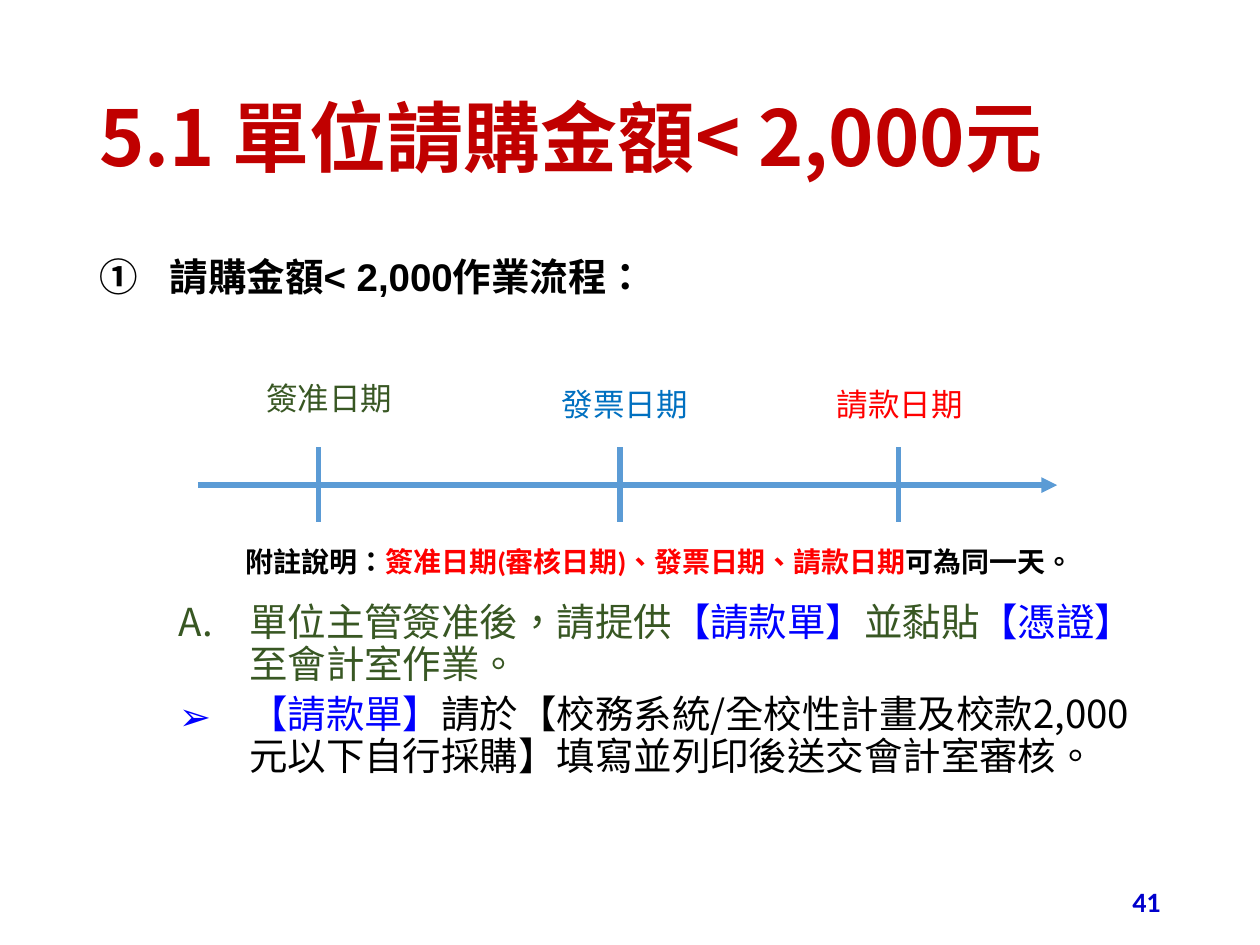
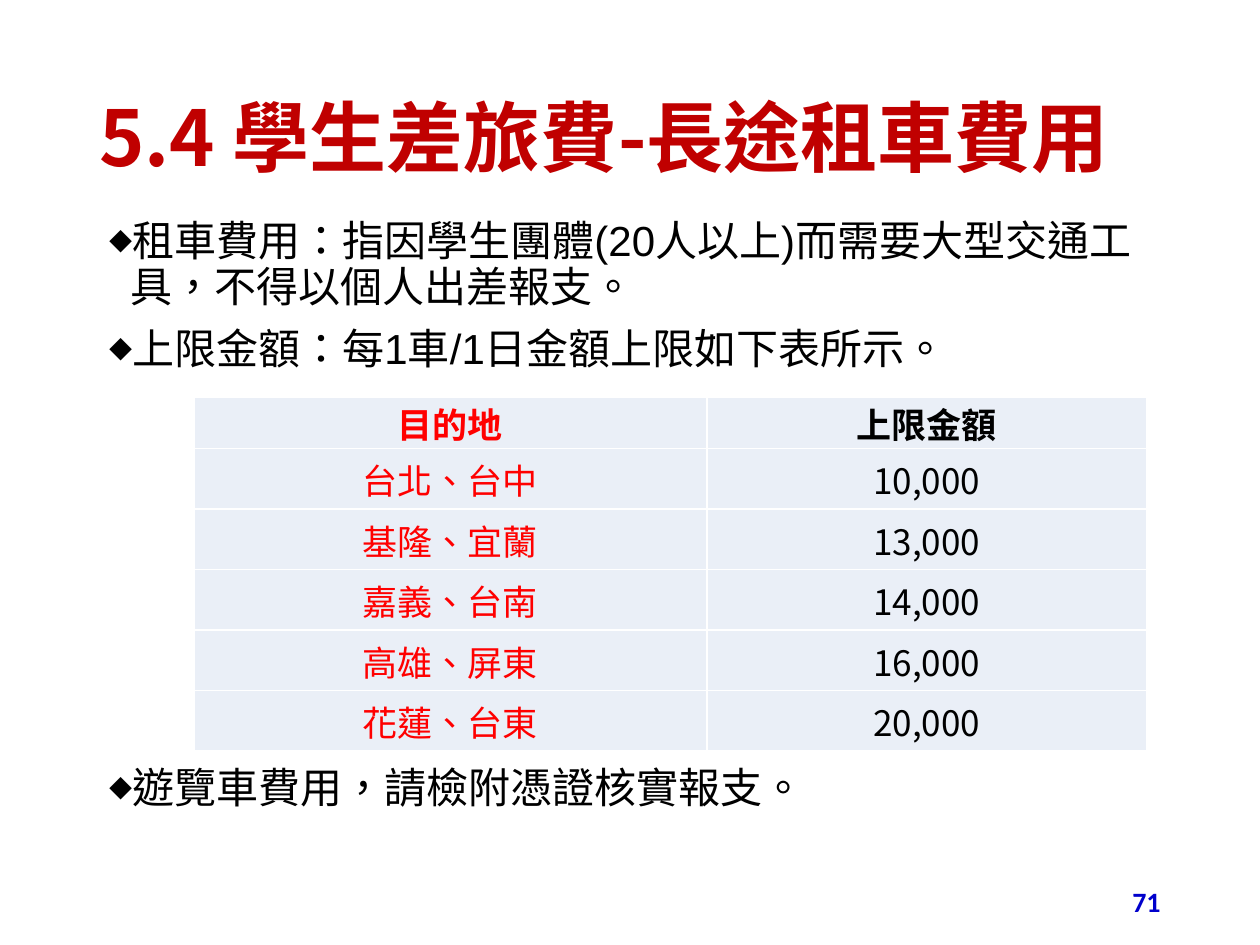
from lxml import etree
from pptx import Presentation
from pptx.dml.color import RGBColor
from pptx.enum.shapes import MSO_CONNECTOR
from pptx.enum.text import MSO_ANCHOR, PP_ALIGN
from pptx.oxml.ns import qn
from pptx.util import Inches, Pt

RED = RGBColor(0xFF, 0x00, 0x00)
DARK_RED = RGBColor(0xC0, 0x00, 0x00)
BLACK = RGBColor(0x00, 0x00, 0x00)
WHITE = RGBColor(0xFF, 0xFF, 0xFF)
GREEN = RGBColor(0x38, 0x57, 0x23)
BLUE = RGBColor(0x00, 0x00, 0xFF)
NUMBER_BLUE = RGBColor(0x00, 0x00, 0xCC)
LABEL_BLUE = RGBColor(0x00, 0x70, 0xC0)
LINE_BLUE = RGBColor(0x5B, 0x9B, 0xD5)
CELL_FILL = RGBColor(0xEA, 0xEF, 0xF7)

NOTO, ARIAL, CALIBRI = "Noto Sans CJK SC", "Arial", "Calibri"
LEFT, CENTER, RIGHT = PP_ALIGN.LEFT, PP_ALIGN.CENTER, PP_ALIGN.RIGHT
TOP, MIDDLE = MSO_ANCHOR.TOP, MSO_ANCHOR.MIDDLE
STRAIGHT = MSO_CONNECTOR.STRAIGHT

BODY_LEFT, BODY_WIDTH = 0.69, 8.62
BODY_SPACING = 0.9  # line spacing of titles and body text
DIAMOND = "◆"


def set_bullet(p, bullet):
    """Use an automatic number scheme or, for a single symbol, that symbol."""
    pPr = p._p.get_or_add_pPr()
    if bullet == DIAMOND:
        etree.SubElement(pPr, qn("a:buSzPct")).set("val", "55000")
    etree.SubElement(pPr, qn("a:buFont")).set("typeface", NOTO)
    if len(bullet) == 1:
        etree.SubElement(pPr, qn("a:buChar")).set("char", bullet)
    else:
        etree.SubElement(pPr, qn("a:buAutoNum")).set("type", bullet)


def add_run(p, text, color, size, font, bold):
    r = p.add_run()
    r.text = text
    r.font.size, r.font.bold, r.font.name = Pt(size), bold, font
    r.font.color.rgb = color
    rPr = r._r.get_or_add_rPr()
    rPr.set("lang", "zh-TW")
    etree.SubElement(rPr, qn("a:ea")).set("typeface", NOTO)


def write(tf, paragraphs, size=18, font=NOTO, bold=False, align=LEFT,
          spacing=None, before=0, indent=(0, 0)):
    """Fill a frame from (bullet, [(text, color), ...]) paragraphs."""
    for i, (bullet, runs) in enumerate(paragraphs):
        p = tf.add_paragraph() if i else tf.paragraphs[0]
        if bullet:
            set_bullet(p, bullet)
        p.alignment = align
        if spacing:
            p.line_spacing = spacing
        if i:
            p.space_before = Pt(before)
        pPr = p._p.get_or_add_pPr()
        pPr.set("marL", str(Inches(indent[0])))
        pPr.set("indent", str(Inches(indent[1])))
        pPr.set("hangingPunct", "0")
        for text, color in runs:
            add_run(p, text, color, size, font, bold)


def add_text(slide, box, paragraphs, anchor=TOP, **fmt):
    tf = slide.shapes.add_textbox(*map(Inches, box)).text_frame
    tf.word_wrap = True
    tf.vertical_anchor = anchor
    write(tf, paragraphs, **fmt)


def add_line(slide, x1, y1, x2, y2, arrow=False):
    line = slide.shapes.add_connector(STRAIGHT, *map(Inches, (x1, y1, x2, y2)))
    line.line.color.rgb = LINE_BLUE
    line.line.width = Pt(3)
    if arrow:
        ln = line.line._get_or_add_ln()
        etree.SubElement(ln, qn("a:tailEnd")).set("type", "triangle")
    etree.SubElement(line._element.spPr, qn("a:effectLst"))


def set_borders(cell):
    tcPr = cell._tc.get_or_add_tcPr()
    for side in ("lnL", "lnR", "lnT", "lnB"):
        ln = etree.SubElement(tcPr, qn(f"a:{side}"), w=str(Pt(1)))
        fill = etree.SubElement(ln, qn("a:solidFill"))
        etree.SubElement(fill, qn("a:srgbClr"), val=str(WHITE))


def add_fee_table(slide, rows):
    widths, heights = (4.07, 3.49), [0.41] + [0.48] * (len(rows) - 1)
    table = slide.shapes.add_table(
        len(rows), 2, Inches(1.54), Inches(3.15),
        Inches(sum(widths)), Inches(sum(heights))).table
    for column, width in zip(table.columns, widths):
        column.width = Inches(width)
    for i, (values, height) in enumerate(zip(rows, heights)):
        table.rows[i].height = Inches(height)
        for j, (text, color) in enumerate(zip(values, (RED, BLACK))):
            cell = table.cell(i, j)
            set_borders(cell)
            cell.fill.solid()
            cell.fill.fore_color.rgb = CELL_FILL
            cell.margin_left = cell.margin_right = cell.margin_top = Inches(0.01)
            cell.margin_bottom = 0
            cell.vertical_anchor = MIDDLE
            write(cell.text_frame, [(None, [(text, color)])],
                  size=20, bold=i == 0, align=CENTER)


def new_slide(prs, title, number):
    slide = prs.slides.add_slide(prs.slide_layouts[6])
    add_text(slide, (BODY_LEFT, 0.4, BODY_WIDTH, 1.45),
             [(None, [(title, DARK_RED)])],
             anchor=MIDDLE, size=44, bold=True, spacing=BODY_SPACING)
    add_text(slide, (7.06, 6.95, 2.25, 0.4), [(None, [(number, NUMBER_BLUE)])],
             anchor=MIDDLE, size=16, font=CALIBRI, bold=True, align=RIGHT)
    return slide


def add_timeline(slide):
    add_line(slide, 1.57, 3.85, 8.39, 3.85, arrow=True)
    for x in (2.53, 4.92, 7.13):
        add_line(slide, x, 3.55, x, 4.14)
    for text, color, box in (
            ("簽准日期", GREEN, (1.38, 2.87, 2.47, 0.57)),
            ("發票日期", LABEL_BLUE, (4.21, 2.96, 1.5, 0.49)),
            ("請款日期", RED, (6.29, 2.96, 1.7, 0.49))):
        add_text(slide, box, [(None, [(text, color)])],
                 anchor=MIDDLE, font=CALIBRI, align=CENTER)
    note = [("附註說明：", BLACK),
            ("簽准日期(審核日期)、發票日期、請款日期", RED),
            ("可為同一天。", BLACK)]
    add_text(slide, (1.22, 4.21, 7.4, 0.49), [(None, note)], anchor=MIDDLE,
             size=16, font=CALIBRI, bold=True, align=CENTER, indent=(0.63, 0))


def build_purchase_slide(prs):
    slide = new_slide(prs, "5.1 單位請購金額< 2,000元", "41")
    add_text(slide, (BODY_LEFT, 2, BODY_WIDTH, 0.5),
             [("circleNumWdWhitePlain", [("請購金額< 2,000作業流程：", BLACK)])],
             size=22, font=ARIAL, bold=True, spacing=BODY_SPACING,
             indent=(0.56, -0.56))
    add_timeline(slide)
    steps = [
        ("alphaUcPeriod", [("單位主管簽准後，請提供", GREEN), ("【請款單】", BLUE),
                           ("並黏貼", GREEN), ("【憑證】", BLUE),
                           ("至會計室作業。", GREEN)]),
        ("➢", [("【請款單】", BLUE),
               ("請於【校務系統/全校性計畫及校款2,000元以下自行採購】"
                "填寫並列印後送交會計室審核。", BLACK)])]
    add_text(slide, (BODY_LEFT, 4.74, BODY_WIDTH, 1.6), steps,
             size=22, spacing=BODY_SPACING, before=5, indent=(1.19, -0.56))


def build_travel_slide(prs):
    slide = new_slide(prs, "5.4 學生差旅費-長途租車費用", "71")
    rules = ["租車費用：指因學生團體(20人以上)而需要大型交通工具，不得以個人出差報支。",
             "上限金額：每1車/1日金額上限如下表所示。"]
    closing = ["遊覽車費用，請檢附憑證核實報支。"]
    for top, height, lines in ((1.7, 1.4, rules), (6.04, 0.5, closing)):
        add_text(slide, (BODY_LEFT, top, BODY_WIDTH, height),
                 [(DIAMOND, [(line, BLACK)]) for line in lines],
                 size=24, font=ARIAL, spacing=BODY_SPACING, before=10,
                 indent=(0.25, -0.17))
    add_fee_table(slide, [
        ("目的地", "上限金額"),
        ("台北、台中", "10,000"),
        ("基隆、宜蘭", "13,000"),
        ("嘉義、台南", "14,000"),
        ("高雄、屏東", "16,000"),
        ("花蓮、台東", "20,000")])


def main():
    prs = Presentation()
    prs.slide_width, prs.slide_height = Inches(10), Inches(7.5)
    build_purchase_slide(prs)
    build_travel_slide(prs)
    prs.save("out.pptx")


if __name__ == "__main__":
    main()
